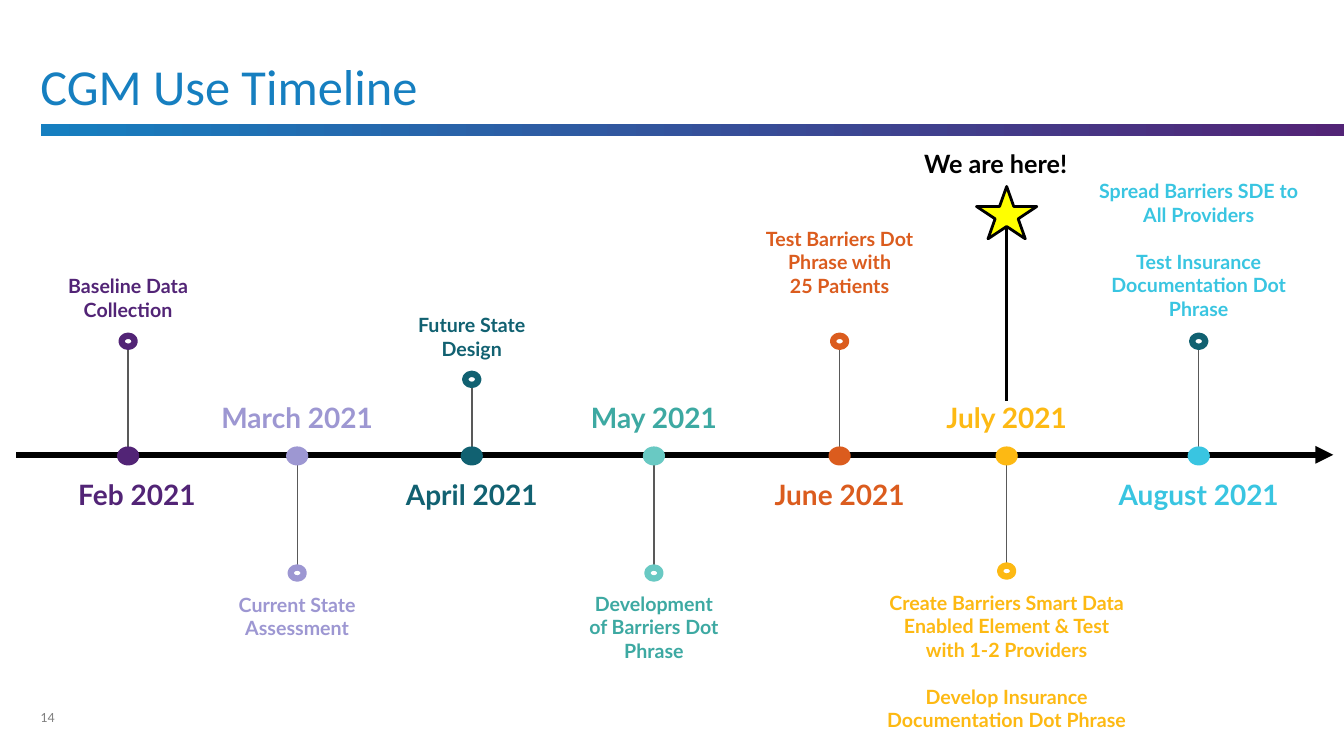
"""Build the CGM use timeline slide."""
from dataclasses import dataclass

from lxml import etree
from pptx import Presentation
from pptx.dml.color import RGBColor
from pptx.enum.shapes import MSO_CONNECTOR, MSO_SHAPE
from pptx.enum.text import MSO_ANCHOR as Anchor, PP_ALIGN as Align
from pptx.oxml.ns import qn
from pptx.util import Cm, Pt

COLOURS = {
    "black": "000000", "white": "FFFFFF", "grey": "808080", "stem": "595959",
    "blue": "167FC0", "purple": "522476", "lilac": "9D97D2", "petrol": "116171",
    "mint": "69C9C3", "teal": "3DA9A2", "orange": "DB5C1E", "amber": "FDB913",
    "sky": "39C5E1", "yellow": "FFFF00",
}
AXIS_Y, DOT_Y = 11.46, 11.49
NOTE_SIZE = 14
NOTE_LINE = 1.2 * NOTE_SIZE


@dataclass(frozen=True)
class Milestone:
    month: str
    x: float
    month_width: float
    dot: str
    ring: str
    text: str
    ring_y: float
    note_top: float
    note_width: float
    note_height: float
    note: tuple[str, ...]
    note_gap: float = 0
    month_align: Align = Align.CENTER


MILESTONES = (
    Milestone("Feb 2021", 3.23, 3.9, "purple", "purple", "purple", 8.6, 6.78, 4.8, 1.45,
              ("Baseline Data Collection",), month_align=Align.RIGHT),
    Milestone("March 2021", 7.49, 4.75, "lilac", "lilac", "lilac", 14.44, 14.81, 4.45, 1.45,
              ("Current State Assessment",)),
    Milestone("April 2021", 11.89, 4.22, "petrol", "petrol", "petrol", 9.56, 7.77, 3.66, 1.45,
              ("Future State", "Design")),
    Milestone("May 2021", 16.48, 4, "mint", "mint", "teal", 14.44, 14.78, 4, 2.06,
              ("Development of Barriers Dot Phrase",)),
    Milestone("June 2021", 21.16, 4.22, "orange", "orange", "orange", 8.6, 5.59, 4.93, 2.06,
              ("Test Barriers Dot", "Phrase with", "25 Patients")),
    Milestone("July 2021", 25.37, 3.96, "amber", "amber", "amber", 14.39, 14.76, 6.73, 4.45,
              ("Create Barriers Smart Data Enabled Element & Test with 1-2 Providers",
               "Develop Insurance Documentation Dot Phrase"), NOTE_LINE),
    Milestone("August 2021", 30.21, 5.05, "sky", "petrol", "sky", 8.6, 4.39, 5.54, 3.84,
              ("Spread Barriers SDE to All Providers",
               "Test Insurance Documentation Dot Phrase"), NOTE_LINE),
)


def rgb(name: str) -> RGBColor:
    return RGBColor.from_string(COLOURS[name])


def add_text(s, left: float, top: float, width: float, height: float,
             lines: tuple[str, ...], size: float, colour: str, *, font: str = "Lato",
             bold: bool = True, align: Align = Align.CENTER, gap: float = 0,
             inset: bool = True, anchor: Anchor = Anchor.TOP, spacing: float = 1) -> None:
    tf = s.shapes.add_textbox(Cm(left), Cm(top), Cm(width), Cm(height)).text_frame
    tf.word_wrap = True
    tf.vertical_anchor = anchor
    if not inset:
        tf.margin_left = tf.margin_right = tf.margin_top = tf.margin_bottom = 0
    for i, line in enumerate(lines):
        p = tf.add_paragraph() if i else tf.paragraphs[0]
        p.alignment = align
        p.line_spacing = spacing
        if i and gap:
            p.space_before = Pt(gap)
        r = p.add_run()
        r.text = line
        r.font.name, r.font.size, r.font.bold = font, Pt(size), bold
        r.font.color.rgb = rgb(colour)


def add_line(s, x1: float, y1: float, x2: float, y2: float, colour: str,
             weight: float, arrow: bool = False) -> None:
    sp = s.shapes.add_connector(MSO_CONNECTOR.STRAIGHT, Cm(x1), Cm(y1), Cm(x2), Cm(y2))
    sp.line.color.rgb = rgb(colour)
    sp.line.width = Pt(weight)
    if arrow:
        etree.SubElement(sp.line._get_or_add_ln(), qn("a:tailEnd"), type="triangle")
    etree.SubElement(sp._element.spPr, qn("a:effectLst"))


def add_mark(s, kind: MSO_SHAPE, x: float, y: float, width: float, height: float,
             fill: str, outline: str = "", weight: float = 0) -> None:
    sp = s.shapes.add_shape(kind, Cm(x - width / 2), Cm(y - height / 2),
                            Cm(width), Cm(height))
    sp.shadow.inherit = False
    sp.fill.solid()
    sp.fill.fore_color.rgb = rgb(fill)
    if outline:
        sp.line.color.rgb = rgb(outline)
        sp.line.width = Pt(weight)
    else:
        sp.line.fill.background()


def add_header(s) -> None:
    bar = s.shapes.add_shape(MSO_SHAPE.RECTANGLE, Cm(1.03), Cm(3.12), Cm(32.84), Cm(0.3))
    bar.shadow.inherit = False
    bar.line.fill.background()
    bar.fill.gradient()
    bar.fill.gradient_angle = 0
    for stop, colour in zip(bar.fill.gradient_stops, ("blue", "purple")):
        stop.color.rgb = rgb(colour)
    plain = dict(font="Calibri", bold=False, align=Align.LEFT, inset=False,
                 anchor=Anchor.BOTTOM)
    add_text(s, 1.02, 0.3, 24.97, 2.62, ("CGM Use Timeline",), 36, "blue",
             spacing=0.85, **plain)
    add_text(s, 1.02, 17.86, 1.52, 0.43, ("14",), 10, "grey", **plain)


def add_milestone(s, m: Milestone) -> None:
    add_line(s, m.x, DOT_Y, m.x, m.ring_y, "stem", 1)
    add_mark(s, MSO_SHAPE.OVAL, m.x, DOT_Y, 0.56, 0.48, m.dot)
    add_mark(s, MSO_SHAPE.OVAL, m.x, m.ring_y, 0.33, 0.28, "white", m.ring, 4.5)
    month_top = 11.9 if m.ring_y < AXIS_Y else 9.96
    add_text(s, m.x - m.month_width / 2, month_top, m.month_width, 1.12, (m.month,),
             20, m.text, align=m.month_align)
    add_text(s, m.x - m.note_width / 2, m.note_top, m.note_width, m.note_height, m.note,
             NOTE_SIZE, m.text, gap=m.note_gap)


def add_here_marker(s, x: float) -> None:
    add_line(s, x, 5.64, x, 10.11, "black", 2)
    add_mark(s, MSO_SHAPE.STAR_5_POINT, x, 5.36, 1.52, 1.32, "yellow", "black", 2)
    add_text(s, 23.04, 3.61, 4.7, 0.81, ("We are here!",), 18, "black", align=Align.LEFT)


def main() -> None:
    prs = Presentation()
    prs.slide_width, prs.slide_height = Cm(33.87), Cm(19.05)
    s = prs.slides.add_slide(prs.slide_layouts[6])
    add_header(s)
    add_line(s, 0.41, AXIS_Y, 33.6, AXIS_Y, "black", 4.25, arrow=True)
    for m in MILESTONES:
        add_milestone(s, m)
    add_here_marker(s, 25.37)
    prs.save("out.pptx")


if __name__ == "__main__":
    main()
